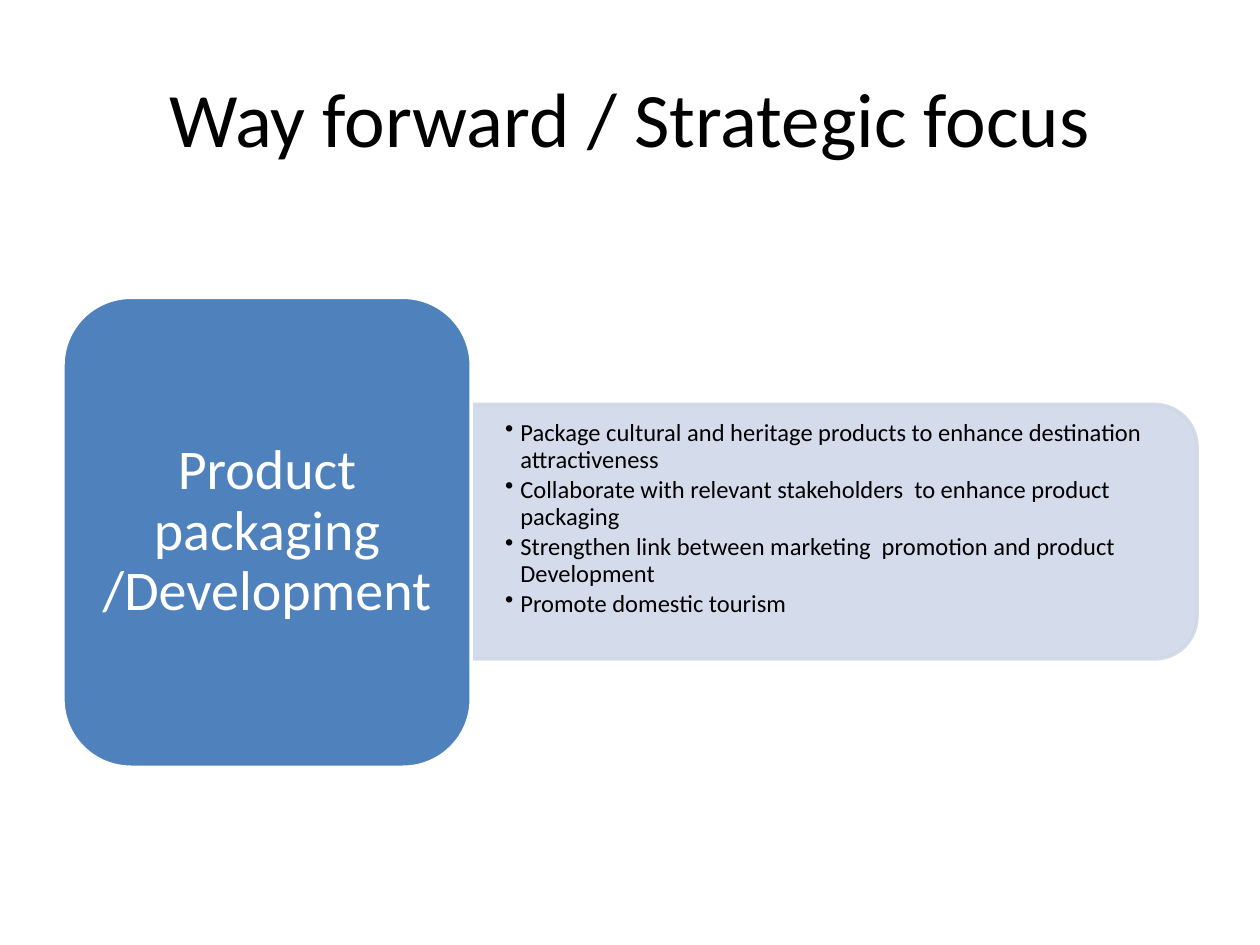
from lxml import etree
from pptx import Presentation
from pptx.dml.color import RGBColor
from pptx.enum.shapes import MSO_SHAPE as SHAPE
from pptx.enum.text import MSO_ANCHOR as ANCHOR, PP_ALIGN as ALIGN
from pptx.oxml.ns import qn
from pptx.util import Inches, Pt


def rgb(color):
    return RGBColor.from_string(color)


def write(shape, lines, size, color="000000", align=ALIGN.CENTER, spacing=1.0,
          after=0, insets=(0.1, 0.05, 0.1, 0.05), bullet_indent=None):
    """Fill a shape with paragraphs; insets are left, top, right, bottom."""
    tf = shape.text_frame
    tf.word_wrap = True
    tf.vertical_anchor = ANCHOR.MIDDLE
    (tf.margin_left, tf.margin_top,
     tf.margin_right, tf.margin_bottom) = map(Inches, insets)
    for i, line in enumerate(lines):
        p = tf.add_paragraph() if i else tf.paragraphs[0]
        p.alignment, p.line_spacing = align, spacing
        p.space_after = Pt(after if i < len(lines) - 1 else 0)
        if bullet_indent:
            pPr = p._p.get_or_add_pPr()
            pPr.set("marL", str(Inches(bullet_indent)))
            pPr.set("indent", str(-Inches(bullet_indent)))
            etree.SubElement(pPr, qn("a:buChar")).set("char", "•")
        r = p.add_run()
        r.text = line
        r.font.name, r.font.size = Style.font, Pt(size)
        r.font.color.rgb = rgb(color)


class Style:
    font = "Calibri"
    blue, pale, white = "4F81BD", "D0D8E8", "FFFFFF"
    line_width = 2

    def __init__(self, slide):
        self.s = slide

    def text(self, box, lines, size, **fmt):
        sp = self.s.shapes.add_textbox(*map(Inches, box))
        write(sp, lines, size, **fmt)
        return sp

    def shape(self, kind, box, fill, line, rotation=0, opacity=None):
        sp = self.s.shapes.add_shape(kind, *map(Inches, box))
        sp.shadow.inherit = False
        sp.rotation = rotation
        sp.fill.solid()
        sp.fill.fore_color.rgb = rgb(fill)
        sp.line.color.rgb = rgb(line)
        sp.line.width = Pt(self.line_width)
        if opacity:
            for clr in sp._element.spPr.iter(qn("a:srgbClr")):
                etree.SubElement(clr, qn("a:alpha")).set("val", str(opacity * 1000))
        return sp


def main():
    prs = Presentation()
    prs.slide_width, prs.slide_height = Inches(10), Inches(7.5)
    d = Style(prs.slides.add_slide(prs.slide_layouts[6]))

    # Title
    d.text((0.5, 0.3, 9, 1.25), ["Way forward / Strategic focus"], 44)

    # Action panel: rounded top turned to face right
    d.shape(SHAPE.ROUND_2_SAME_RECTANGLE, (5.61, 1.34, 2.02, 5.76),
            d.pale, d.pale, rotation=90, opacity=90)
    actions = [
        "Package cultural and heritage products to enhance destination attractiveness",
        "Collaborate with relevant stakeholders  to enhance product packaging",
        "Strengthen link between marketing  promotion and product Development",
        "Promote domestic tourism",
    ]
    d.text((3.74, 3.31, 5.66, 1.82), actions, 14, align=ALIGN.LEFT, spacing=0.9,
           after=2.3, insets=(0.27, 0, 0.27, 0.2), bullet_indent=0.12)

    # Focus area
    focus = d.shape(SHAPE.ROUNDED_RECTANGLE, (0.5, 2.36, 3.24, 3.73), d.blue, d.white)
    write(focus, ["Product packaging /Development"], 32, color=d.white, spacing=0.9,
          insets=(0.13, 0.07, 0.13, 0.07))

    prs.save("out.pptx")


if __name__ == "__main__":
    main()
